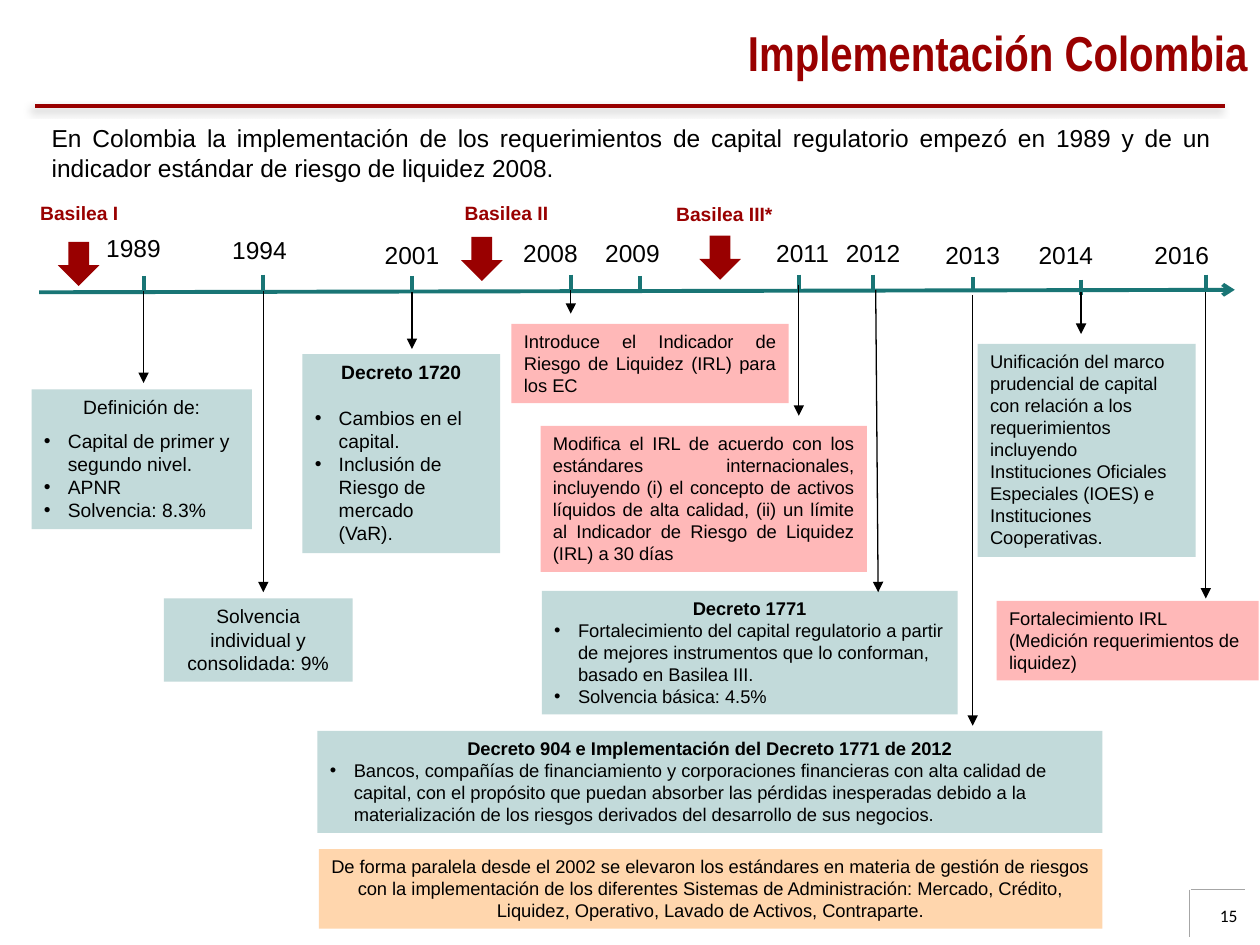
from lxml import etree
from pptx import Presentation
from pptx.dml.color import RGBColor
from pptx.enum import shapes, text
from pptx.oxml import parse_xml
from pptx.oxml.ns import nsdecls, qn
from pptx.util import Inches, Pt

RED, TEAL, BLACK, GREY = "990000", "197575", "000000", "A6A6A6"
MINT, PINK, ORANGE = "C2DADA", "FFB8B8", "FFD6AD"
ALIGN = {"left": text.PP_ALIGN.LEFT, "center": text.PP_ALIGN.CENTER,
         "right": text.PP_ALIGN.RIGHT, "justify": text.PP_ALIGN.JUSTIFY}

prs = Presentation()
prs.slide_width, prs.slide_height = Inches(10), Inches(7.5)
s = prs.slides.add_slide(prs.slide_layouts[1])


def write(tf, paragraphs, size, color=BLACK, font="Arial", anchor=text.MSO_ANCHOR.TOP):
    """Write (style, text, bold, points after); a style is an alignment, "bullet" or "hang"."""
    tf.word_wrap = True
    tf.auto_size = text.MSO_AUTO_SIZE.NONE
    tf.vertical_anchor = anchor
    for i, (style, words, bold, after) in enumerate(paragraphs):
        p = tf.paragraphs[0] if i == 0 else tf.add_paragraph()
        pPr = p._p.get_or_add_pPr()
        left = Inches(0.19) if style in ("bullet", "hang") else 0
        pPr.set("marL", str(left))
        pPr.set("indent", str(-left if style == "bullet" else 0))
        if style == "bullet":
            etree.SubElement(pPr, qn("a:buFont"), typeface="Arial")
            etree.SubElement(pPr, qn("a:buChar"), char="•")
        else:
            etree.SubElement(pPr, qn("a:buNone"))
        p.alignment = ALIGN.get(style, ALIGN["left"])
        p.space_before, p.space_after = Pt(0), Pt(after)
        r = p.add_run()
        r.text = words
        r.font.name, r.font.size, r.font.bold = font, Pt(size), bold
        r.font.color.rgb = RGBColor.from_string(color)


def add_line(x1, y1, x2, y2, color, width, tail=None):
    sp = s.shapes.add_connector(shapes.MSO_CONNECTOR.STRAIGHT,
                                Inches(x1), Inches(y1), Inches(x2), Inches(y2))
    sp.line.color.rgb = RGBColor.from_string(color)
    sp.line.width = Pt(width)
    if tail:
        etree.SubElement(sp.line._get_or_add_ln(), qn("a:tailEnd"), type=tail)
    etree.SubElement(sp._element.spPr, qn("a:effectLst"))
    return sp


# Header rule and page number corner
rule = add_line(0.28, 0.84, 9.72, 0.84, RED, 2)
rule._element.spPr.find(qn("a:effectLst")).append(parse_xml(
    f'<a:outerShdw {nsdecls("a")} blurRad="{Pt(4)}" dist="{Pt(3)}" dir="8100000">'
    '<a:srgbClr val="000000"><a:alpha val="40000"/></a:srgbClr></a:outerShdw>'))
add_line(9.45, 7.06, 9.88, 7.06, GREY, 0.25)
add_line(9.44, 7.06, 9.44, 7.44, GREY, 0.25)

# Title and introduction
title, body = s.shapes.title, s.placeholders[1]
title.left, title.top, title.width, title.height = map(Inches, (3.9, 0, 6.1, 0.82))
write(title.text_frame, [("right", "Implementación Colombia", True, 0)], 28, RED,
      "Arial Narrow", text.MSO_ANCHOR.MIDDLE)
body.left, body.top, body.width, body.height = map(Inches, (0.31, 0.93, 9.41, 0.63))
write(body.text_frame, [("justify", "En Colombia la implementación de los requerimientos de "
      "capital regulatorio empezó en 1989 y de un indicador estándar de riesgo de liquidez "
      "2008.", False, 0)], 14)

# Time axis with its ticks
add_line(0.31, 2.32, 9.8, 2.3, TEAL, 2.25, "arrow")
for x, y in [(1.14, 2.19), (2.09, 2.18), (3.27, 2.19), (4.53, 2.18), (5.08, 2.19),
             (6.34, 2.18), (6.93, 2.18), (7.72, 2.2), (8.58, 2.22), (9.57, 2.18)]:
    add_line(x, y, x, y + 0.12, TEAL, 2.25)

# Labels: centre, top, width, height, text, size, bold, colour
years = [(1.06, 1.8, "1989"), (2.06, 1.82, "1994"), (3.27, 1.86, "2001"),
         (4.37, 1.84, "2008"), (5.02, 1.84, "2009"), (6.37, 1.84, "2011"),
         (6.93, 1.84, "2012"), (7.72, 1.86, "2013"), (8.46, 1.86, "2014"),
         (9.38, 1.86, "2016")]
accords = [(0.63, 1.55, "Basilea I"), (4.02, 1.55, "Basilea II"), (5.75, 1.56, "Basilea III*")]
labels = [(x, y, 0.7, 0.34, words, 14, False, BLACK) for x, y, words in years]
labels += [(x, y, 1.2, 0.29, words, 11, True, RED) for x, y, words in accords]
for x, y, w, h, words, size, bold, color in labels:
    box = s.shapes.add_textbox(Inches(x - w / 2), Inches(y), Inches(w), Inches(h))
    write(box.text_frame, [("center", words, bold, 0)], size, color)

for x, y in [(0.46, 1.92), (3.66, 1.88), (5.55, 1.87)]:
    sp = s.shapes.add_shape(shapes.MSO_SHAPE.DOWN_ARROW,
                            Inches(x), Inches(y), Inches(0.33), Inches(0.35))
    sp.shadow.inherit = False
    sp.fill.solid()
    sp.fill.fore_color.rgb = RGBColor.from_string(RED)
    sp.line.fill.background()

# Cards: left, top, width, height, fill, size, paragraphs
cards = [
    (0.25, 3.09, 1.75, 1.11, MINT, 11, [
        ("center", "Definición de:", False, 6),
        ("bullet", "Capital de primer y segundo nivel.", False, 0),
        ("bullet", "APNR", False, 0),
        ("bullet", "Solvencia: 8.3%", False, 0)]),
    (1.3, 4.75, 1.5, 0.66, MINT, 11, [
        ("center", "Solvencia individual y consolidada: 9%", False, 0)]),
    (2.4, 2.81, 1.57, 1.58, MINT, 11, [
        ("center", "Decreto 1720", True, 13),
        ("bullet", "Cambios en el capital.", False, 0),
        ("bullet", "Inclusión de Riesgo de mercado", False, 0),
        ("hang", "(VaR).", False, 0)]),
    (4.3, 4.69, 3.3, 0.98, MINT, 10.5, [
        ("center", "Decreto 1771", True, 0),
        ("bullet", "Fortalecimiento del capital regulatorio a partir de mejores "
         "instrumentos que lo conforman, basado en Basilea III.", False, 0),
        ("bullet", "Solvencia básica: 4.5%", False, 0)]),
    (7.76, 2.73, 1.73, 1.69, MINT, 10.5, [
        ("left", "Unificación del marco prudencial de capital con relación a los "
         "requerimientos incluyendo Instituciones Oficiales Especiales (IOES) e "
         "Instituciones Cooperativas.", False, 0)]),
    (2.52, 5.8, 6.23, 0.81, MINT, 10.5, [
        ("center", "Decreto 904 e Implementación del Decreto 1771 de 2012", True, 0),
        ("bullet", "Bancos, compañías de financiamiento y corporaciones financieras con alta "
         "calidad de capital, con el propósito que puedan absorber las pérdidas inesperadas "
         "debido a la materialización de los riesgos derivados del desarrollo de sus "
         "negocios.", False, 0)]),
    (4.29, 3.38, 2.59, 1.16, PINK, 10.5, [
        ("justify", "Modifica el IRL de acuerdo con los estándares internacionales, incluyendo "
         "(i) el concepto de activos líquidos de alta calidad, (ii) un límite al Indicador de "
         "Riesgo de Liquidez (IRL) a 30 días", False, 0)]),
    (4.06, 2.57, 2.2, 0.63, PINK, 10.5, [
        ("justify", "Introduce el Indicador de Riesgo de Liquidez (IRL) para los EC", False, 0)]),
    (7.91, 4.77, 2.08, 0.63, PINK, 10.5, [
        ("left", "Fortalecimiento IRL (Medición requerimientos de liquidez)", False, 0)]),
    (2.53, 6.74, 6.22, 0.63, ORANGE, 10.5, [
        ("center", "De forma paralela desde el 2002 se elevaron los estándares en materia de "
         "gestión de riesgos con la implementación de los diferentes Sistemas de "
         "Administración: Mercado, Crédito, Liquidez, Operativo, Lavado de Activos, "
         "Contraparte.", False, 0)]),
]
for x, y, w, h, fill, size, paragraphs in cards:
    sp = s.shapes.add_shape(shapes.MSO_SHAPE.RECTANGLE,
                            Inches(x), Inches(y), Inches(w), Inches(h))
    sp.shadow.inherit = False
    sp.fill.solid()
    sp.fill.fore_color.rgb = RGBColor.from_string(fill)
    sp.line.fill.background()
    write(sp.text_frame, paragraphs, size)

# Arrows from the axis down to the cards
for x1, y1, x2, y2 in [(1.14, 2.31, 1.14, 3.04), (2.09, 2.31, 2.09, 4.7),
                       (3.27, 2.32, 3.27, 2.77), (4.53, 2.3, 4.53, 2.49),
                       (6.34, 2.26, 6.34, 3.3), (6.95, 2.3, 6.97, 4.7),
                       (7.72, 2.34, 7.72, 5.76), (8.58, 2.32, 8.58, 2.65),
                       (9.57, 2.32, 9.57, 4.75)]:
    add_line(x1, y1, x2, y2, BLACK, 0.75, "triangle")

number = s.shapes.add_textbox(Inches(9.3), Inches(7.13), Inches(0.62), Inches(0.4))
write(number.text_frame, [("right", "15", False, 0)], 10, font="Calibri")

prs.save("out.pptx")
